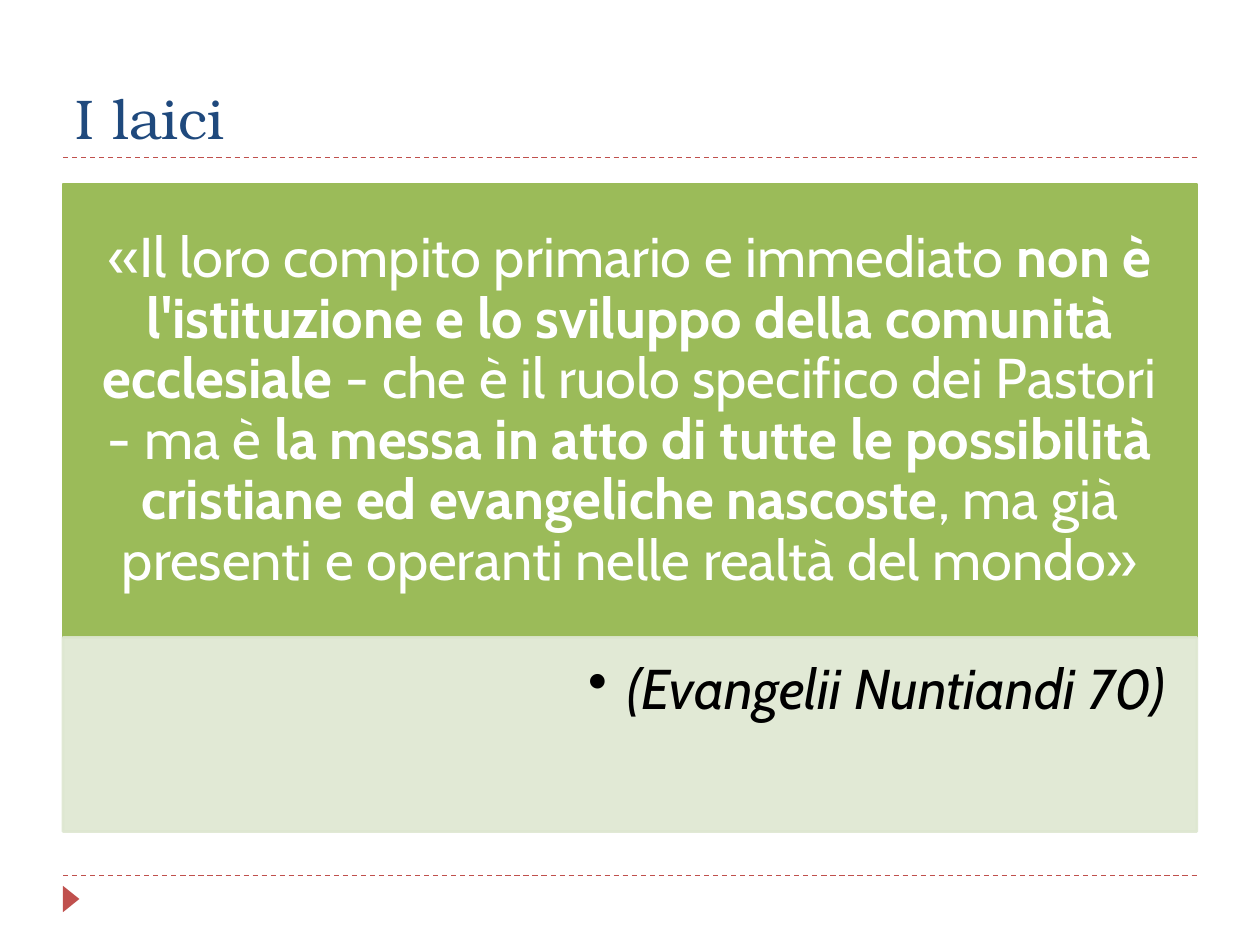
from lxml import etree
from pptx import Presentation
from pptx.dml.color import RGBColor
from pptx.enum.dml import MSO_LINE
from pptx.enum.shapes import MSO_CONNECTOR, MSO_SHAPE
from pptx.enum.text import MSO_ANCHOR, PP_ALIGN
from pptx.oxml.ns import qn
from pptx.util import Pt

STRAIGHT = MSO_CONNECTOR.STRAIGHT
RECTANGLE = MSO_SHAPE.RECTANGLE
TRIANGLE = MSO_SHAPE.ISOSCELES_TRIANGLE
DASH = MSO_LINE.DASH
TOP, MIDDLE, BOTTOM = MSO_ANCHOR.TOP, MSO_ANCHOR.MIDDLE, MSO_ANCHOR.BOTTOM
LEFT, CENTER, RIGHT = PP_ALIGN.LEFT, PP_ALIGN.CENTER, PP_ALIGN.RIGHT

RED = RGBColor(0xC0, 0x50, 0x4D)
NAVY = RGBColor(0x1F, 0x49, 0x7D)
GREEN = RGBColor(0x9B, 0xBB, 0x59)
PALE_GREEN = RGBColor(0xDE, 0xE7, 0xD1)
WHITE = RGBColor(0xFF, 0xFF, 0xFF)
BLACK = RGBColor(0x00, 0x00, 0x00)

MARGIN, CONTENT_WIDTH = 36, 648


def add_panel(top, height, color, anchor, insets):
    panel = slide.shapes.add_shape(
        RECTANGLE, Pt(MARGIN), Pt(top), Pt(CONTENT_WIDTH), Pt(height))
    panel.shadow.inherit = False
    panel.fill.solid()
    panel.fill.fore_color.rgb = color
    panel.line.color.rgb = color
    panel.line.width = Pt(1.5)
    frame = panel.text_frame
    frame.word_wrap = True
    frame.vertical_anchor = anchor
    frame.margin_left, frame.margin_top, frame.margin_right, frame.margin_bottom = map(Pt, insets)
    return panel


def format_span(span, font, color, bold=False, italic=False):
    span.font.name = font
    span.font.size = Pt(32)
    span.font.color.rgb = color
    span.font.bold = bold
    span.font.italic = italic


deck = Presentation()
deck.slide_width, deck.slide_height = Pt(720), Pt(540)
slide = deck.slides.add_slide(deck.slide_layouts[5])

# Dashed rules under the title and above the footer
for y in (500.4, 90):
    rule = slide.shapes.add_connector(
        STRAIGHT, Pt(MARGIN), Pt(y), Pt(MARGIN + CONTENT_WIDTH), Pt(y))
    rule.line.color.rgb = RED
    rule.line.width = Pt(0.75)
    rule.line.dash_style = DASH
    etree.SubElement(rule._element.spPr, qn("a:effectLst"))

# Footer marker
marker = slide.shapes.add_shape(TRIANGLE, Pt(33.1), Pt(509), Pt(15.1), Pt(9.4))
marker.rotation = 90
marker.shadow.inherit = False
marker.fill.solid()
marker.fill.fore_color.rgb = RED
marker.line.fill.background()

# Title
title = slide.shapes.title
title.left, title.top = Pt(MARGIN), Pt(12.2)
title.width, title.height = Pt(CONTENT_WIDTH), Pt(77.8)
title.text_frame.text = "I laici"
title.text_frame.vertical_anchor = BOTTOM
title_para = title.text_frame.paragraphs[0]
title_para.alignment = LEFT
format_span(title_para.runs[0], "TeX Gyre Bonum", NAVY)

# Quotation, with its key phrases in bold
quote_panel = add_panel(105.1, 259.2, GREEN, MIDDLE, (18, 10, 18, 10))
quote_para = quote_panel.text_frame.paragraphs[0]
quote_para.alignment = CENTER
quote_para.line_spacing = 0.9
quote_spans = [
    ("«Il loro compito primario e immediato ", False),
    ("non è l'istituzione e lo sviluppo della comunità ecclesiale", True),
    (" - che è il ruolo specifico dei Pastori - ma è ", False),
    ("la messa in atto di tutte le possibilità cristiane ed evangeliche nascoste", True),
    (", ma già presenti e operanti nelle realtà del mondo»", False),
]
for text, bold in quote_spans:
    span = quote_para.add_run()
    span.text = text
    format_span(span, "Cabin", WHITE, bold=bold)

# Source of the quotation, on a slightly transparent panel
source_panel = add_panel(364.3, 110.9, PALE_GREEN, TOP, (13.7, 13.7, 18, 20))
for color in source_panel._element.spPr.iter(qn("a:srgbClr")):
    etree.SubElement(color, qn("a:alpha"), val="90000")
source_para = source_panel.text_frame.paragraphs[0]
source_para.text = "(Evangelii Nuntiandi 70)"
source_para.alignment = RIGHT
source_para.level = 1
source_para.line_spacing = 0.9
format_span(source_para.runs[0], "Cabin", BLACK, italic=True)
properties = source_para._p.get_or_add_pPr()
properties.set("marL", str(Pt(22.5)))
properties.set("indent", str(-Pt(22.5)))
etree.SubElement(properties, qn("a:buChar"), char="•")

deck.save("out.pptx")
